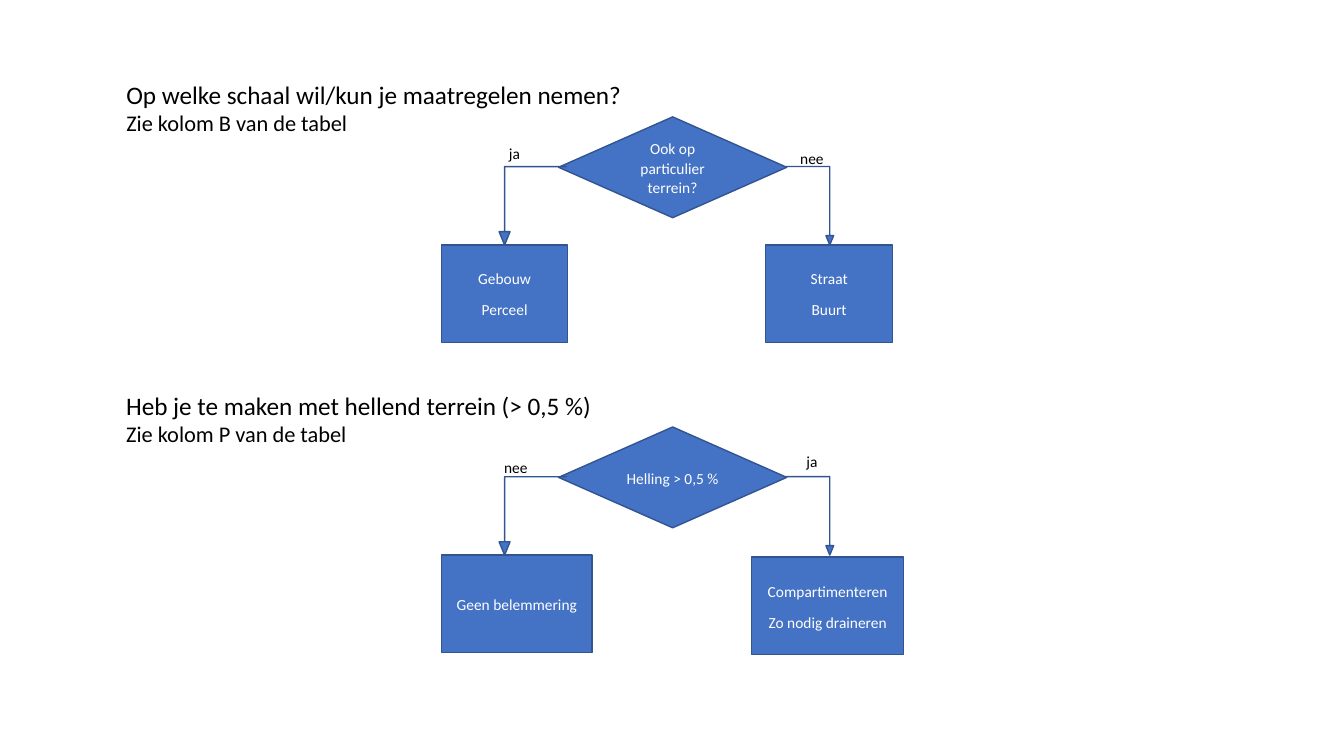
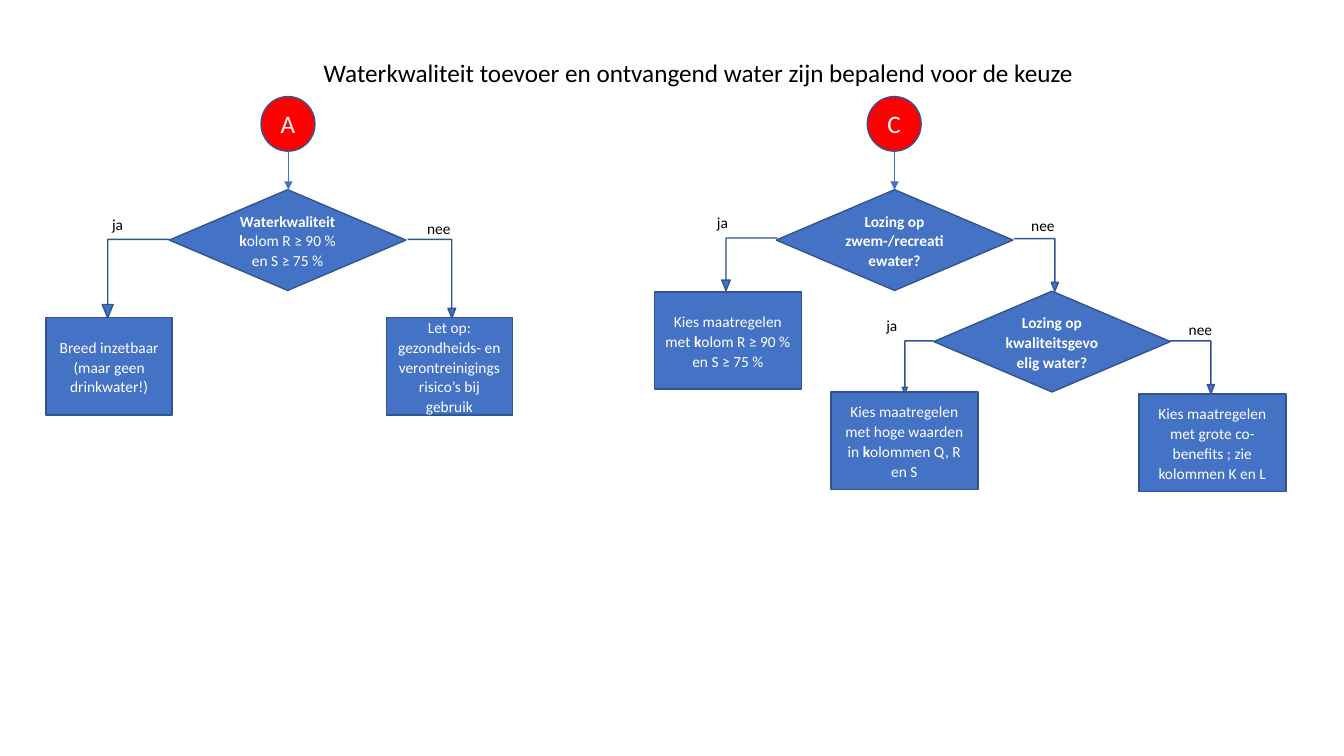
from lxml import etree
from pptx import Presentation
from pptx.dml.color import RGBColor
from pptx.enum.shapes import MSO_CONNECTOR, MSO_SHAPE
from pptx.enum.text import MSO_ANCHOR, MSO_AUTO_SIZE, PP_ALIGN
from pptx.oxml.ns import qn
from pptx.util import Pt

DECISION = MSO_SHAPE.FLOWCHART_DECISION
PROCESS = MSO_SHAPE.FLOWCHART_PROCESS
BENT_ARROW = MSO_SHAPE.BENT_UP_ARROW
OVAL = MSO_SHAPE.OVAL
STRAIGHT = MSO_CONNECTOR.STRAIGHT
TOP = MSO_ANCHOR.TOP
MIDDLE = MSO_ANCHOR.MIDDLE
NO_AUTOFIT = MSO_AUTO_SIZE.NONE
LEFT = PP_ALIGN.LEFT
CENTER = PP_ALIGN.CENTER

TITLE_ONLY = 5
FONT = "Calibri"
BLUE = "4472C4"
OUTLINE = "325491"
RED = "FF0000"
WHITE = "FFFFFF"
BLACK = "000000"
NODE_HEIGHT = 72
BOX_HEIGHT = 69.5
LABEL_WIDTHS = {"ja": 22.5, "nee": 31.5}


def color(value):
    return RGBColor.from_string(value)


class FlowDeck:
    def __init__(self):
        self.presentation = Presentation()
        self.presentation.slide_width = Pt(960)
        self.presentation.slide_height = Pt(540)
        self.slide = None

    def new_slide(self):
        layout = self.presentation.slide_layouts[TITLE_ONLY]
        self.slide = self.presentation.slides.add_slide(layout)

    def format_run(self, run, size, ink, bold=False):
        run.font.name = FONT
        run.font.size = Pt(size)
        run.font.bold = bold
        run.font.color.rgb = color(ink)

    def fill_plain(self, shape, lines, sizes):
        frame = shape.text_frame
        frame.text = "\n".join(lines)
        frame.word_wrap = False
        frame.auto_size = NO_AUTOFIT
        frame.vertical_anchor = TOP
        for paragraph, size in zip(frame.paragraphs, sizes):
            paragraph.alignment = LEFT
            for run in paragraph.runs:
                self.format_run(run, size, BLACK)

    def title(self, left, top, width, height, lines):
        shape = self.slide.shapes.title
        shape.left, shape.top = Pt(left), Pt(top)
        shape.width, shape.height = Pt(width), Pt(height)
        self.fill_plain(shape, lines, (18, 16))

    def text(self, left, top, width, height, lines, sizes=(18, 16)):
        shape = self.slide.shapes.add_textbox(Pt(left), Pt(top), Pt(width), Pt(height))
        self.fill_plain(shape, lines, sizes)

    def label(self, left, top, answer):
        self.text(left, top, LABEL_WIDTHS[answer], 21, [answer], (11,))

    def shape(self, kind, left, top, width, height, fill=BLUE):
        shape = self.slide.shapes.add_shape(kind, Pt(left), Pt(top), Pt(width), Pt(height))
        shape.shadow.inherit = False
        shape.fill.solid()
        shape.fill.fore_color.rgb = color(fill)
        shape.line.color.rgb = color(OUTLINE)
        shape.line.width = Pt(1)
        return shape

    def write_centered(self, shape, lines, size=11):
        frame = shape.text_frame
        frame.word_wrap = True
        frame.vertical_anchor = MIDDLE
        for index, line in enumerate(lines):
            paragraph = frame.add_paragraph() if index else frame.paragraphs[0]
            paragraph.alignment = CENTER
            paragraph.line_spacing = 1.07
            paragraph.space_after = Pt(8)
            for part, words in enumerate(line.split("*")):
                if words:
                    run = paragraph.add_run()
                    run.text = words
                    self.format_run(run, size, WHITE, bold=part % 2 == 1)

    def decision(self, left, top, width, question):
        self.write_centered(self.shape(DECISION, left, top, width, NODE_HEIGHT), [question])

    def box(self, left, top, width, *lines):
        self.write_centered(self.shape(PROCESS, left, top, width, BOX_HEIGHT), lines)

    def badge(self, left, top, letter):
        shape = self.shape(OVAL, left, top, 38.5, 39, RED)
        self.write_centered(shape, [letter], 18)
        paragraph = shape.text_frame.paragraphs[0]
        paragraph.line_spacing = 1.0
        paragraph.space_after = Pt(0)

    def bent_arrow(self, left, top, width, height, to_left):
        shape = self.shape(BENT_ARROW, left, top, width, height)
        for index, value in enumerate((0, 0.081, 0.199)):
            shape.adjustments[index] = value
        if to_left:
            shape.rotation = 180
        else:
            shape.element.spPr.get_or_add_xfrm().set("flipV", "1")

    def down_arrow(self, x, top, bottom):
        connector = self.slide.shapes.add_connector(STRAIGHT, Pt(x), Pt(top), Pt(x), Pt(bottom))
        connector.line.color.rgb = color(BLUE)
        connector.line.width = Pt(0.5)
        etree.SubElement(connector.line._get_or_add_ln(), qn("a:tailEnd"), type="triangle")
        etree.SubElement(connector.element.spPr, qn("a:effectLst"))


def build_scale_and_slope(deck):
    deck.new_slide()
    deck.title(83, 53, 372, 48, ["Op welke schaal wil/kun je maatregelen nemen?", "Zie kolom B van de tabel"])
    deck.text(83, 275, 351, 48, ["Heb je te maken met hellend terrein (> 0,5 %)", "Zie kolom P van de tabel"])

    for top, question in ((83.5, "Ook op particulier terrein?"), (305, "Helling > 0,5 %")):
        deck.decision(399, top, 163, question)
        deck.bent_arrow(356.5, top + 35.5, 48, 56, True)
        deck.bent_arrow(561.5, top + 35.5, 34, 56, False)

    deck.box(315.5, 175, 90, "Gebouw", "Perceel")
    deck.box(547, 175, 90.5, "Straat", "Buurt")
    deck.box(315.5, 396.5, 107.5, "Geen belemmering")
    deck.box(537, 398, 108.5, "Compartimenteren", "Zo nodig draineren")

    deck.label(356.5, 99.5, "ja")
    deck.label(564.5, 103, "nee")
    deck.label(353, 323.5, "nee")
    deck.label(569, 319.5, "ja")


def build_water_quality(deck):
    deck.new_slide()
    deck.title(224, 37.5, 566, 29, ["Waterkwaliteit toevoer en ontvangend water zijn bepalend voor de keuze"])

    for letter, left in (("A", 186.5), ("C", 619.5)):
        deck.badge(left, 69, letter)
        deck.down_arrow(left + 19.5, 108, 135.5)

    for left, top, question in (
        (121, 135.5, "*Waterkwaliteit k*olom R ≥ 90 % en S ≥ 75 %"),
        (554.5, 135.5, "*Lozing op zwem-/recreatiewater?*"),
        (667, 208, "*Lozing op kwaliteitsgevoelig water?*"),
    ):
        deck.decision(left, top, 169, question)

    for left, top, width, height, to_left in (
        (73, 171, 48, 56, True),
        (291.5, 171, 34, 56, False),
        (515.5, 170, 39.5, 37.5, True),
        (724.5, 170.5, 31.5, 37.5, False),
        (644.5, 243.5, 22, 37.5, True),
        (836, 243.5, 31.5, 37.5, False),
    ):
        deck.bent_arrow(left, top, width, height, to_left)

    for left, top, width, advice in (
        (33, 227, 90, "Breed inzetbaar (maar geen drinkwater!)"),
        (276, 227, 90, "Let op: gezondheids- en verontreinigingsrisico’s bij gebruik"),
        (467.5, 208.5, 105, "Kies maatregelen met *k*olom R ≥ 90 % en S ≥ 75 %"),
        (593.5, 280, 105, "Kies maatregelen met hoge waarden in *k*olommen Q, R en S"),
        (813.5, 281.5, 105, "Kies maatregelen met grote co-benefits ; zie kolommen K en L"),
    ):
        deck.box(left, top, width, advice)

    for left, top in ((73, 150), (505, 148.5), (626, 222)):
        deck.label(left, top, "ja")
    for left, top in ((298, 153), (729.5, 151), (842, 225)):
        deck.label(left, top, "nee")


def main():
    deck = FlowDeck()
    build_scale_and_slope(deck)
    build_water_quality(deck)
    deck.presentation.save("out.pptx")


if __name__ == "__main__":
    main()
